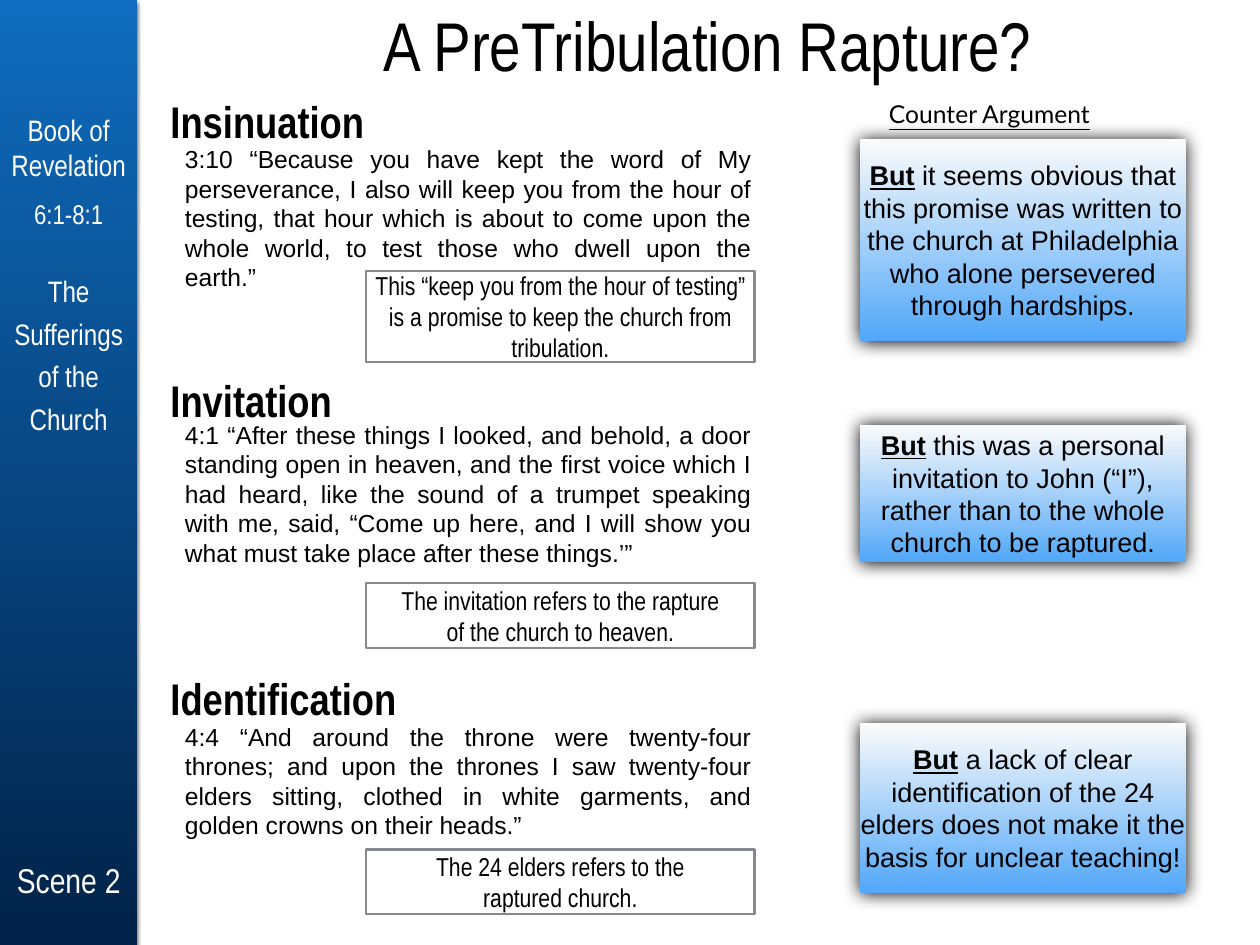
from dataclasses import dataclass

from lxml.etree import SubElement
from pptx import Presentation
from pptx.dml.color import RGBColor
from pptx.enum.shapes import MSO_SHAPE as Shape
from pptx.enum.text import MSO_ANCHOR as Anchor, MSO_AUTO_SIZE as AutoSize, PP_ALIGN as Align
from pptx.oxml.ns import qn
from pptx.util import Pt

TITLE = "A PreTribulation Rapture?"
COUNTER_LABEL = "Counter Argument"

# text, top, height, size, inset, line spacing
SIDEBAR = [
    ("Book of Revelation", 91, 57, 24, 0, None),
    ("6:1-8:1", 145, 57, 22, 0, None),
    ("The Sufferings of the Church", 225.5, 119.5, 24, 4, 1.2),
    ("Scene 2", 680, 70, 28, 0, None),
]

# Each part holds its text, top and height
SECTIONS = [
    {
        "heading": ("Insinuation", 77, 42),
        "verse": ("3:10 “Because you have kept the word of My perseverance, I also will "
                  "keep you from the hour of testing, that hour which is about to come "
                  "upon the whole world, to test those who dwell upon the earth.”", 113, 128),
        "note": ("This “keep you from the hour of testing” is a promise to keep the "
                 "church from tribulation.", 220.3, 74),
        "counter": (" it seems obvious that this promise was written to the church at "
                    "Philadelphia who alone persevered through hardships.", 113, 164),
    },
    {
        "heading": ("Invitation", 304, 42),
        "verse": ("4:1 “After these things I looked, and behold, a door standing open in "
                  "heaven, and the first voice which I had heard, like the sound of a "
                  "trumpet speaking with me, said, “Come up here, and I will show you what "
                  "must take place after these things.’”", 337, 128),
        "note": ("The invitation refers to the rapture\vof the church to heaven.", 474, 52.5),
        "counter": (" this was a personal invitation to John (“I”), rather than to the "
                    "whole church to be raptured.", 345, 112),
    },
    {
        "heading": ("Identification", 546.5, 42),
        "verse": ("4:4 “And around the throne were twenty-four thrones; and upon the "
                  "thrones I saw twenty-four elders sitting, clothed in white garments, "
                  "and golden crowns on their heads.”", 582.5, 104),
        "note": ("The 24 elders refers to the\vraptured church.", 690.5, 52.5),
        "counter": (" a lack of clear identification of the 24 elders does not make it "
                    "the basis for unclear teaching!", 587.5, 138),
    },
]

# Columns: left and width
SIDEBAR_COLUMN = (0, 111.5)
HEADING_COLUMN = (134.6, 225)
VERSE_COLUMN = (146, 469)
NOTE_COLUMN = (297.4, 316)
COUNTER_COLUMN = (699, 264.5)
SLIDE_SIZE = (1024, 768)


@dataclass(frozen=True)
class Theme:
    narrow: str = "Arial Narrow"
    plain: str = "Arial"
    label: str = "Lato"
    black: str = "000000"
    white: str = "FFFFFF"
    note_line: str = "85888D"
    sidebar_fill: tuple = ("0F6CBE", "012248")
    counter_fill: tuple = ("FBFBFB", "51A7F9")
    title_size: float = 56
    heading_size: float = 36
    verse_size: float = 20
    note_size: float = 21
    counter_size: float = 22
    label_size: float = 20
    verse_leading: float = 24
    counter_leading: float = 26.4


theme = Theme()


def place(column, top, height):
    left, width = column
    return Pt(left), Pt(top), Pt(width), Pt(height)


def write(shape, text, *, size, font=theme.narrow, color=theme.black, align=Align.CENTER,
          inset=0, spacing=None, bold=False, underline=False, lead=None):
    """Fill a shape with one paragraph; lead is an opening run in bold underline."""
    frame = shape.text_frame
    frame.word_wrap = True
    frame.auto_size = AutoSize.NONE
    frame.vertical_anchor = Anchor.MIDDLE
    frame.margin_left = frame.margin_right = Pt(inset)
    frame.margin_top = frame.margin_bottom = Pt(inset)
    paragraph = frame.paragraphs[0]
    paragraph.alignment = align
    if spacing:
        paragraph.line_spacing = spacing
    pieces = [(lead, True, True)] if lead else []
    pieces.append((text, bold, underline))
    for piece, is_bold, is_underlined in pieces:
        for index, line in enumerate(piece.split("\v")):
            if index:
                paragraph.add_line_break()
            run = paragraph.add_run()
            run.text = line
            run.font.name = font
            run.font.size = Pt(size)
            run.font.bold = is_bold
            run.font.underline = is_underlined
            run.font.color.rgb = RGBColor.from_string(color)


def add_panel(slide, column, top, height, *, gradient=None, line=None, shadow=None):
    """Add a rectangle; shadow is (opacity percent, blur, distance), cast downwards."""
    panel = slide.shapes.add_shape(Shape.RECTANGLE, *place(column, top, height))
    if gradient:
        panel.fill.gradient()
        panel.fill.gradient_angle = 270
        for stop, color in zip(panel.fill.gradient_stops, gradient):
            stop.color.rgb = RGBColor.from_string(color)
    else:
        panel.fill.background()
    if line:
        panel.line.color.rgb = RGBColor.from_string(line)
        panel.line.width = Pt(2)
    else:
        panel.line.fill.background()
    panel.shadow.inherit = False
    if shadow:
        opacity, blur, distance = shadow
        effects = panel.element.spPr.find(qn("a:effectLst"))
        outer = SubElement(effects, qn("a:outerShdw"), blurRad=str(Pt(blur)),
                           dist=str(Pt(distance)), dir="5400000", rotWithShape="0")
        color = SubElement(outer, qn("a:srgbClr"), val=theme.black)
        SubElement(color, qn("a:alpha"), val=str(opacity * 1000))
    return panel


def add_text(slide, column, top, height, text, **style):
    write(slide.shapes.add_textbox(*place(column, top, height)), text, **style)


def add_sidebar(slide):
    add_panel(slide, SIDEBAR_COLUMN, 0, SLIDE_SIZE[1],
              gradient=theme.sidebar_fill, shadow=(50, 3, 2))
    for text, top, height, size, inset, spacing in SIDEBAR:
        add_text(slide, SIDEBAR_COLUMN, top, height, text, size=size,
                 color=theme.white, inset=inset, spacing=spacing)


def add_section(slide, section):
    text, top, height = section["verse"]
    add_text(slide, VERSE_COLUMN, top, height, text, size=theme.verse_size, font=theme.plain,
             align=Align.JUSTIFY, inset=4.3, spacing=Pt(theme.verse_leading))
    text, top, height = section["heading"]
    add_text(slide, HEADING_COLUMN, top, height, text, size=theme.heading_size,
             align=Align.LEFT, inset=4, bold=True)
    text, top, height = section["counter"]
    counter = add_panel(slide, COUNTER_COLUMN, top, height,
                        gradient=theme.counter_fill, shadow=(100, 15, 0.7))
    write(counter, text, lead="But", size=theme.counter_size, font=theme.plain,
          spacing=Pt(theme.counter_leading))
    text, top, height = section["note"]
    note = add_panel(slide, NOTE_COLUMN, top, height, line=theme.note_line)
    write(note, text, size=theme.note_size)


def main():
    presentation = Presentation()
    presentation.slide_width, presentation.slide_height = map(Pt, SLIDE_SIZE)
    slide = presentation.slides.add_slide(presentation.slide_layouts[5])
    add_sidebar(slide)
    title = slide.shapes.title
    title.left, title.top, title.width, title.height = place((126, 898), 1, 70)
    write(title, TITLE, size=theme.title_size)
    for section in SECTIONS:
        add_section(slide, section)
    add_text(slide, (718.5, 225), 76.5, 31, COUNTER_LABEL, size=theme.label_size,
             font=theme.label, align=Align.LEFT, inset=4, underline=True)
    presentation.save("out.pptx")


if __name__ == "__main__":
    main()
